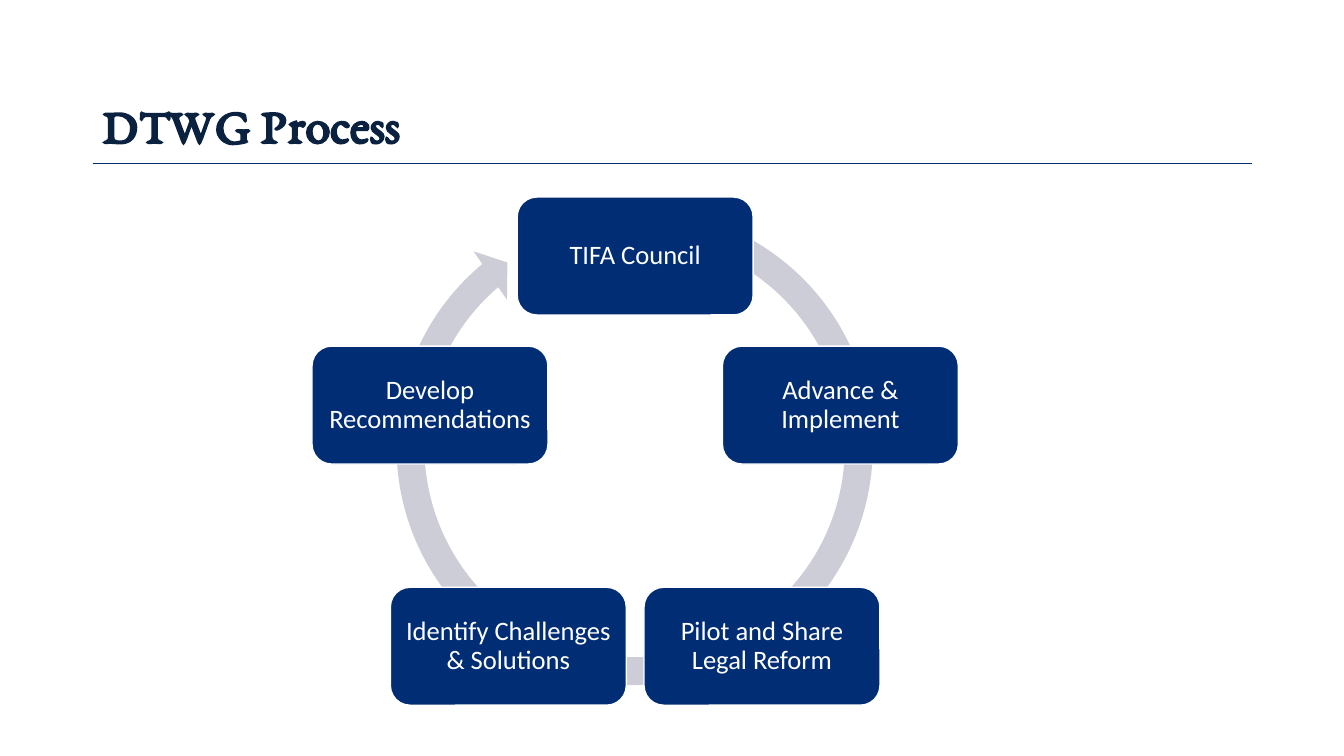
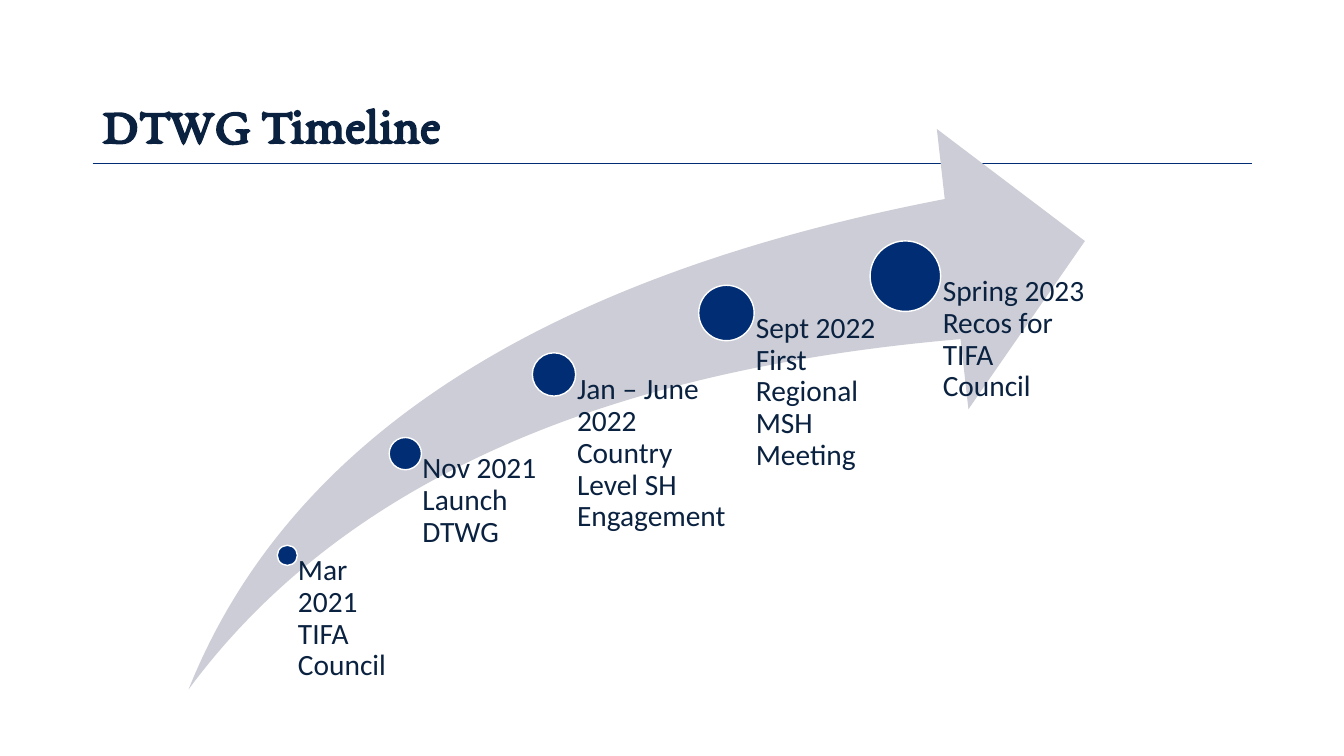
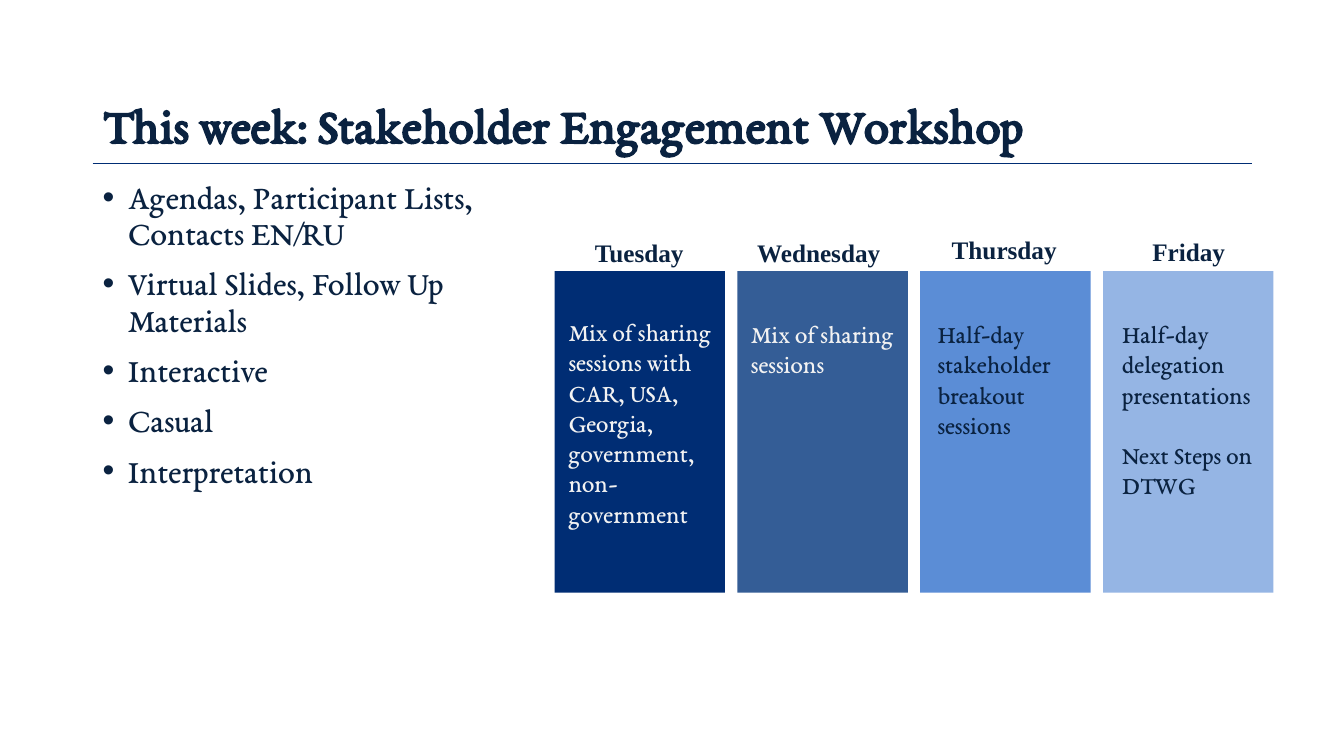
"""Build three slides on the DTWG process, timeline and workshop."""
from dataclasses import dataclass
from math import cos, radians, sin

from lxml.etree import SubElement
from pptx import Presentation
from pptx.dml.color import RGBColor
from pptx.enum.shapes import MSO_CONNECTOR, MSO_SHAPE
from pptx.enum.text import MSO_ANCHOR, PP_ALIGN
from pptx.oxml.ns import qn
from pptx.shapes.autoshape import Shape
from pptx.slide import Slide
from pptx.text.text import TextFrame
from pptx.util import Pt

PX = 9144
INK = {
    "ink": "0A2240",
    "navy": "002D74",
    "steel": "345D96",
    "blue": "5B8DD6",
    "sky": "95B5E4",
    "gray": "CCCDD6",
    "white": "FFFFFF",
    "pale": "F2F2F2",
}


@dataclass(frozen=True)
class Box:
    x: float
    y: float
    w: float
    h: float

    def emu(self) -> tuple[int, ...]:
        return tuple(round(v * PX) for v in (self.x, self.y, self.w, self.h))


@dataclass(frozen=True)
class Look:
    font: str
    size: int
    color: str = "ink"
    bold: bool = False
    align: PP_ALIGN = PP_ALIGN.LEFT
    lead: float = 1.0
    gap: float = 0
    mark: str = ""


@dataclass(frozen=True)
class Stop:
    x: float
    y: float
    size: int
    wide: int
    text: str


@dataclass(frozen=True)
class Day:
    name: str
    fill: str
    color: str
    head: Box
    note: Box
    lines: tuple[str, ...]


TITLE = Look("EB Garamond", 36, bold=True, lead=0.9)
LIST = Look("EB Garamond", 24, lead=0.9, gap=10, mark="•")
NODE = Look("Calibri", 19, "white", align=PP_ALIGN.CENTER, lead=0.9)
STEP = Look("Calibri", 21, lead=0.9)
HEAD = Look("Times New Roman", 18, bold=True, align=PP_ALIGN.CENTER)

STEPS = (
    "TIFA Council",
    "Advance & Implement",
    "Pilot and Share Legal Reform",
    "Identify Challenges & Solutions",
    "Develop Recommendations",
)
STOPS = (
    Stop(285, 551, 20, 116, "Mar 2021 TIFA Council"),
    Stop(402, 450, 32, 148, "Nov 2021 Launch DTWG"),
    Stop(549.5, 371.5, 43, 172, "Jan – June 2022 Country Level SH Engagement"),
    Stop(720.5, 310.5, 55, 178, "Sept 2022 First Regional MSH Meeting"),
    Stop(898, 274, 70, 178, "Spring 2023 Recos for TIFA Council"),
)
TOPICS = (
    "Agendas, Participant Lists, Contacts EN/RU",
    "Virtual Slides, Follow Up Materials",
    "Interactive",
    "Casual",
    "Interpretation",
)
DAYS = (
    Day("Tuesday", "navy", "pale", Box(558, 231, 152, 40), Box(554, 309, 165, 222),
        ("Mix of sharing sessions with CAR, USA, Georgia, government, non-government",)),
    Day("Wednesday", "steel", "pale", Box(736, 231, 152, 40), Box(735, 311, 165, 71),
        ("Mix of sharing sessions",)),
    Day("Thursday", "blue", "ink", Box(920, 228, 152, 40), Box(920, 311, 165, 131),
        ("Half-day stakeholder breakout sessions",)),
    Day("Friday", "sky", "ink", Box(1103, 230, 152, 40), Box(1103, 311, 165, 192),
        ("Half-day delegation presentations", "Next Steps on DTWG")),
)


def tint(name: str) -> RGBColor:
    return RGBColor.from_string(INK[name])


def write(frame: TextFrame, lines: tuple[str, ...], look: Look) -> None:
    frame.word_wrap = True
    for i, line in enumerate(lines):
        para = frame.add_paragraph() if i else frame.paragraphs[0]
        para.alignment = look.align
        para.line_spacing = look.lead
        para.space_before = Pt(look.gap if i else 0)
        if look.mark:
            props = para._p.get_or_add_pPr()
            props.set("marL", str(25 * PX))
            props.set("indent", str(-25 * PX))
            SubElement(props, qn("a:buFont")).set("typeface", "Arial")
            SubElement(props, qn("a:buChar")).set("char", look.mark)
        run = para.add_run()
        run.text = line
        run.font.name = look.font
        run.font.size = Pt(look.size)
        run.font.bold = look.bold
        run.font.color.rgb = tint(look.color)


def label(slide: Slide, box: Box, lines: tuple[str, ...], look: Look) -> TextFrame:
    frame = slide.shapes.add_textbox(*box.emu()).text_frame
    write(frame, lines, look)
    return frame


def draw(slide: Slide, kind: MSO_SHAPE, box: Box, fill: str, edge: str = "") -> Shape:
    shape = slide.shapes.add_shape(kind, *box.emu())
    shape.shadow.inherit = False
    shape.fill.solid()
    shape.fill.fore_color.rgb = tint(fill)
    if edge:
        shape.line.color.rgb = tint(edge)
        shape.line.width = Pt(1)
    else:
        shape.line.fill.background()
    return shape


def bend(shape: Shape, *values: float) -> None:
    for i, value in enumerate(values):
        shape.adjustments[i] = value


def start(deck: Presentation, title: str) -> Slide:
    slide = deck.slides.add_slide(deck.slide_layouts[6])
    rule = slide.shapes.add_connector(
        MSO_CONNECTOR.STRAIGHT, 92 * PX, 162 * PX, 1242 * PX, 162 * PX)
    rule.line.color.rgb = tint("navy")
    rule.line.width = Pt(0.5)
    SubElement(rule._element.spPr, qn("a:effectLst"))
    frame = label(slide, Box(92, 86, 1150, 80), (title,), TITLE)
    frame.vertical_anchor = MSO_ANCHOR.MIDDLE
    return slide


def cycle(deck: Presentation) -> None:
    slide = start(deck, "DTWG Process")
    ring = draw(slide, MSO_SHAPE.CIRCULAR_ARROW, Box(378, 192, 503, 503), "gray")
    bend(ring, 0.055, 3.307, 137.941, 173.749, 0.058)
    wide, high, reach = 234, 117, 214
    for i, step in enumerate(STEPS):
        turn = radians(i * 360 / len(STEPS))
        x = 630 + reach * sin(turn)
        y = 468 - reach * cos(turn)
        box = Box(x - wide / 2, y - high / 2, wide, high)
        node = draw(slide, MSO_SHAPE.ROUNDED_RECTANGLE, box, "navy", "white")
        bend(node, 0.1667)
        frame = node.text_frame
        frame.margin_left = frame.margin_right = 8 * PX
        frame.margin_top = frame.margin_bottom = 8 * PX
        frame.vertical_anchor = MSO_ANCHOR.MIDDLE
        write(frame, (step,), NODE)


def timeline(deck: Presentation) -> None:
    slide = start(deck, "DTWG Timeline")
    swoosh = draw(slide, MSO_SHAPE.SWOOSH_ARROW, Box(187, 128, 889, 556), "gray")
    bend(swoosh, 0.25, 0.25)
    for stop in STOPS:
        half = stop.size / 2
        dot = Box(stop.x - half, stop.y - half, stop.size, stop.size)
        draw(slide, MSO_SHAPE.OVAL, dot, "navy", "white")
        box = Box(stop.x, stop.y, stop.wide, 684 - stop.y)
        frame = label(slide, box, (stop.text,), STEP)
        frame.margin_left = round(stop.size * 0.53 * PX)
        frame.margin_top = frame.margin_right = frame.margin_bottom = 0


def workshop(deck: Presentation) -> None:
    slide = start(deck, "This week: Stakeholder Engagement Workshop")
    label(slide, Box(92, 174, 431, 476), TOPICS, LIST)
    for i, day in enumerate(DAYS):
        box = Box(550 + i * 544 / 3, 269, 169, 319)
        draw(slide, MSO_SHAPE.RECTANGLE, box, day.fill)
        label(slide, day.head, (day.name,), HEAD)
        label(slide, day.note, day.lines, Look("EB Garamond", 18, day.color, gap=21.5))


def main() -> None:
    deck = Presentation()
    deck.slide_width = 1333 * PX
    deck.slide_height = 750 * PX
    cycle(deck)
    timeline(deck)
    workshop(deck)
    deck.save("out.pptx")


if __name__ == "__main__":
    main()
